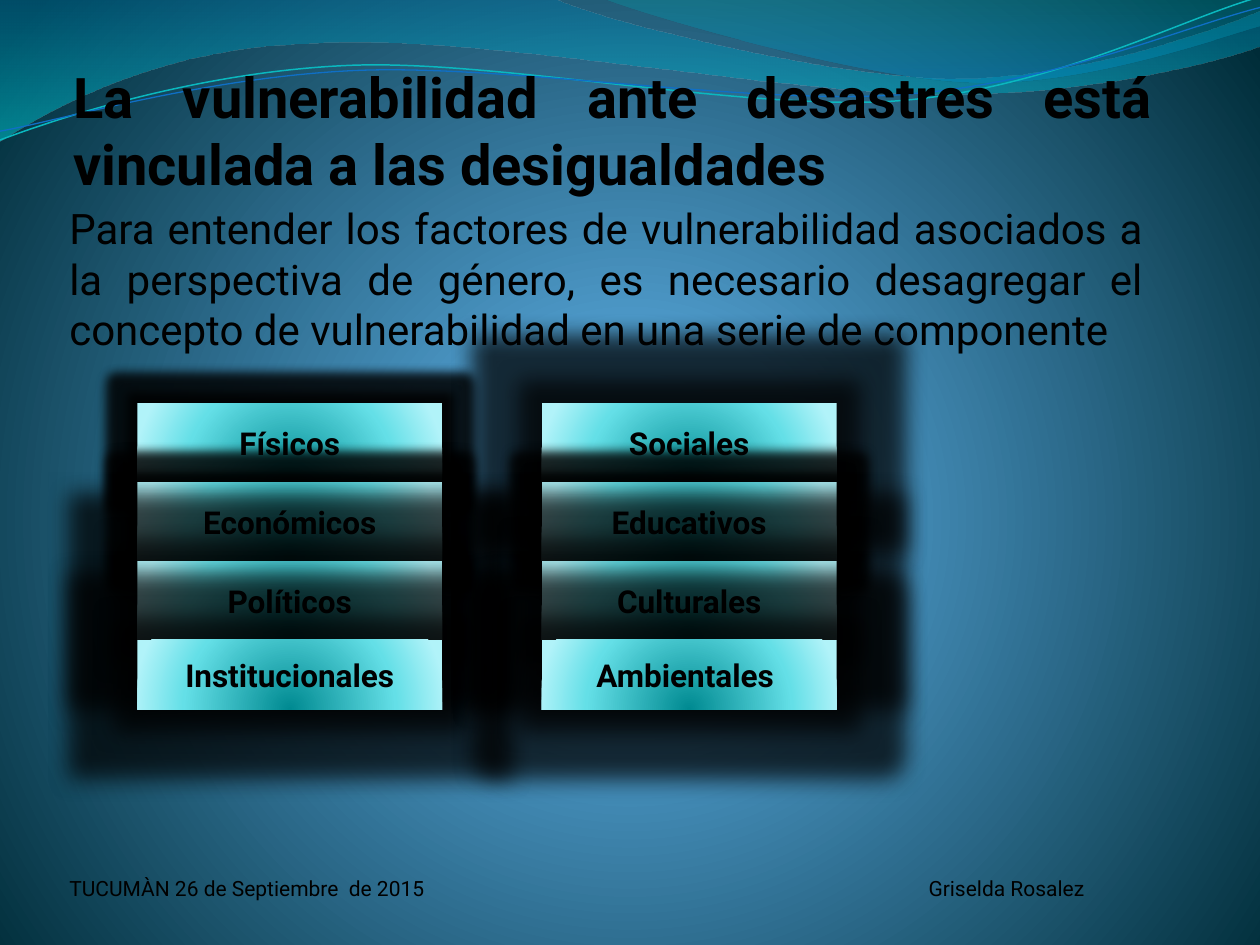
import pptx
import pptx.dml.color
import pptx.enum.shapes
import pptx.enum.text
import pptx.oxml.ns
import pptx.util
from lxml import etree

Pt = pptx.util.Pt
RGB = pptx.dml.color.RGBColor
Align = pptx.enum.text.PP_ALIGN
Anchor = pptx.enum.text.MSO_ANCHOR
qn = pptx.oxml.ns.qn

BLACK = RGB(0x00, 0x00, 0x00)
SKY = RGB(0x4A, 0xA0, 0xD6)
BLUE = RGB(0x4C, 0x98, 0xC7)
NIGHT = RGB(0x00, 0x2C, 0x38)
DEEP = RGB(0x00, 0x8A, 0x91)
AQUA = RGB(0x64, 0xDF, 0xE7)
PALE = RGB(0xB1, 0xF3, 0xF9)
OCEAN = RGB(0x00, 0x74, 0xA1)
CYAN = RGB(0x00, 0xC6, 0xCF)
TEAL = RGB(0x00, 0xA1, 0xA9)
AZURE = RGB(0x00, 0x8B, 0xBF)
FOAM = RGB(0x0A, 0xB8, 0xBF)
ROYAL = RGB(0x0F, 0x6F, 0xC6)

SMALL, LARGE = (12, 80), (26, 65)
FACTORS = [
    (78.5, 174.2, [("Físicos", SMALL), ("Económicos", SMALL),
                   ("Políticos", LARGE), ("Institucionales", LARGE)]),
    (309.6, 168.5, [("Sociales", LARGE), ("Educativos", SMALL),
                    ("Culturales", LARGE), ("Ambientales ", LARGE)]),
]
BANDS = [
    ([(0, 0), (317, -0.7), (343, 12, 478, 45, 546, 45), (614, 45, 690, 19, 720, 6.5),
      (721, 26), (708, 32, 626, 55, 537, 54), (448, 54, 275, 20, 185, 24.5),
      (93, 26, 33, 60, -0.7, 81)], [(0, OCEAN, 45), (100, CYAN, 55)]),
    ([(345, -0.7), (366, 8, 491, 45, 554, 47), (616, 50, 692, 23, 720, 15),
      (720, 0)], [(0, TEAL, 30), (80, AZURE, 45)]),
]
CURVES = [
    ([(0, 80), (34.6, 67, 113.8, 41, 199.4, 37.4), (284.4, 33.8, 427, 64, 513.4, 57.6),
      (599.8, 51, 675.4, 10.8, 718.6, -1.4)], FOAM, 0.85),
    ([(0, 75), (33.8, 69, 118, 44, 203.8, 40.3), (290, 36.7, 429.8, 60.5, 516, 54),
      (602, 48, 677.5, 15, 720, 4.3)], ROYAL, 0.75),
]


def node(root, tag, **attrs):
    """Add a child element with the given attributes."""
    return etree.SubElement(root, qn(tag), {k: str(v) for k, v in attrs.items()})


def tint(root, color, alpha):
    """Add a colour with an opacity in percent."""
    node(node(root, "a:srgbClr", val=color), "a:alpha", val=alpha * 1000)


def blend(root, stops, focus=None):
    """Swap the first solid fill under root for a gradient."""
    solid = root.find(".//" + qn("a:solidFill"))
    grad = etree.Element(qn("a:gradFill"), {"rotWithShape": "1"})
    steps = node(grad, "a:gsLst")
    for pos, color, alpha in stops:
        tint(node(steps, "a:gs", pos=pos * 1000), color, alpha)
    if focus:
        sides = {k: v * 1000 for k, v in zip("ltrb", focus)}
        node(node(grad, "a:path", path="circle"), "a:fillToRect", **sides)
    else:
        node(grad, "a:lin", ang=5400000, scaled=1)
    solid.getparent().replace(solid, grad)


def wave(slide, route, close):
    """Draw an outline of lines and cubic curves."""
    dots = [(round(part[i] * 10), round(part[i + 1] * 10))
            for part in route for i in range(0, len(part), 2)]
    pen = slide.shapes.build_freeform(*dots[0], scale=Pt(0.1))
    pen.add_line_segments(dots[1:], close=close)
    shape = pen.convert_to_shape()
    lines = iter(list(shape.element.iter(qn("a:lnTo"))))
    for part in route[1:]:
        group = [next(lines) for _ in range(len(part) // 2)]
        if len(group) == 3:
            bend = etree.Element(qn("a:cubicBezTo"))
            group[0].addprevious(bend)
            for line in group:
                bend.append(line[0])
                line.getparent().remove(line)
    shape.shadow.inherit = False
    return shape


def band(slide, route, stops):
    """Draw a filled wave."""
    shape = wave(slide, route, True)
    shape.fill.solid()
    shape.line.fill.background()
    blend(shape.element.spPr, stops)


def curve(slide, route, color, width):
    """Draw an open wave line."""
    shape = wave(slide, route, False)
    shape.fill.background()
    shape.line.color.rgb = color
    shape.line.width = Pt(width)


def write(shape, text, size=18, bold=False, align=Align.LEFT, anchor=Anchor.TOP,
          inset=(7.2, 3.6, 7.2, 3.6), before=0):
    """Put formatted text in a shape."""
    frame = shape.text_frame
    frame.word_wrap = True
    frame.auto_size = pptx.enum.text.MSO_AUTO_SIZE.NONE
    frame.vertical_anchor = anchor
    (frame.margin_left, frame.margin_top,
     frame.margin_right, frame.margin_bottom) = map(Pt, inset)
    para = frame.paragraphs[0]
    para.alignment = align
    para.space_before = Pt(before)
    run = para.add_run()
    run.text = text
    font = run.font
    font.name, font.size, font.bold = "Roboto", Pt(size), bold
    font.color.rgb = BLACK
    return para


def place(slide, shape, left, top, width, height):
    """Move a placeholder and bring it to the front."""
    shape.left, shape.top = Pt(left), Pt(top)
    shape.width, shape.height = Pt(width), Pt(height)
    slide.shapes.element.append(shape.element)
    return shape


def box(slide, text, halo, left, top, width, height):
    """Draw a factor box with a glossy fill, dark halo and soft shadow."""
    shape = slide.shapes.add_shape(pptx.enum.shapes.MSO_SHAPE.RECTANGLE,
                                   Pt(left), Pt(top), Pt(width), Pt(height))
    shape.fill.solid()
    shape.line.fill.background()
    blend(shape.element.spPr, [(0, DEEP, 100), (68, AQUA, 100), (100, PALE, 100)],
          (50, 130, 50, -30))
    shape.shadow.inherit = False
    effects = shape.element.spPr.find(qn("a:effectLst"))
    reach, alpha = halo
    tint(node(effects, "a:glow", rad=Pt(reach)), BLACK, alpha)
    shade = node(effects, "a:outerShdw", blurRad=Pt(3.5), dist=Pt(2.2),
                 dir=5400000, rotWithShape=0)
    tint(shade, BLACK, 32)
    write(shape, text, bold=True, align=Align.CENTER, anchor=Anchor.MIDDLE)


def foot(slide):
    """Write the place, date and author with a tab between."""
    shape = slide.shapes.add_textbox(Pt(39.6), Pt(500.4), Pt(630), Pt(28.8))
    para = write(shape, "TUCUMÀN 26 de Septiembre  de 2015\tGriselda Rosalez",
                 size=12, anchor=Anchor.BOTTOM, inset=(0, 0, 0, 14.2))
    tabs = node(para._p.get_or_add_pPr(), "a:tabLst")
    node(tabs, "a:tab", pos=Pt(491), algn="l")


def main():
    """Build the slide."""
    deck = pptx.Presentation()
    deck.slide_width, deck.slide_height = Pt(720), Pt(540)
    slide = deck.slides.add_slide(deck.slide_layouts[0])
    slide.background.fill.solid()
    blend(slide.element, [(0, SKY, 100), (25, BLUE, 100), (100, NIGHT, 100)],
          (10, 110, 10, 100))
    for route, stops in BANDS:
        band(slide, route, stops)
    for route, color, width in CURVES:
        curve(slide, route, color, width)
    title = place(slide, slide.shapes.title, 41.8, 50.4, 618.5, 61.9)
    write(title, "La vulnerabilidad ante desastres está vinculada a las desigualdades",
          size=32, bold=True, align=Align.JUSTIFY, anchor=Anchor.BOTTOM,
          inset=(0, 0, 1.44, 0))
    body = place(slide, slide.placeholders[1], 39.6, 112.3, 618.5, 399.6)
    write(body, "Para entender los factores de vulnerabilidad asociados a la perspectiva "
          "de género, es necesario desagregar el concepto de vulnerabilidad en una serie "
          "de componente", size=24, align=Align.JUSTIFY, inset=(0, 3.6, 4.9, 3.6),
          before=5.4)
    foot(slide)
    for left, width, names in FACTORS:
        for i, (name, halo) in enumerate(names):
            tall = 39.6 if i == len(names) - 1 else 45.1
            box(slide, name, halo, left, 230.4 + 45.1 * i, width, tall)
    deck.save("out.pptx")


if __name__ == "__main__":
    main()
